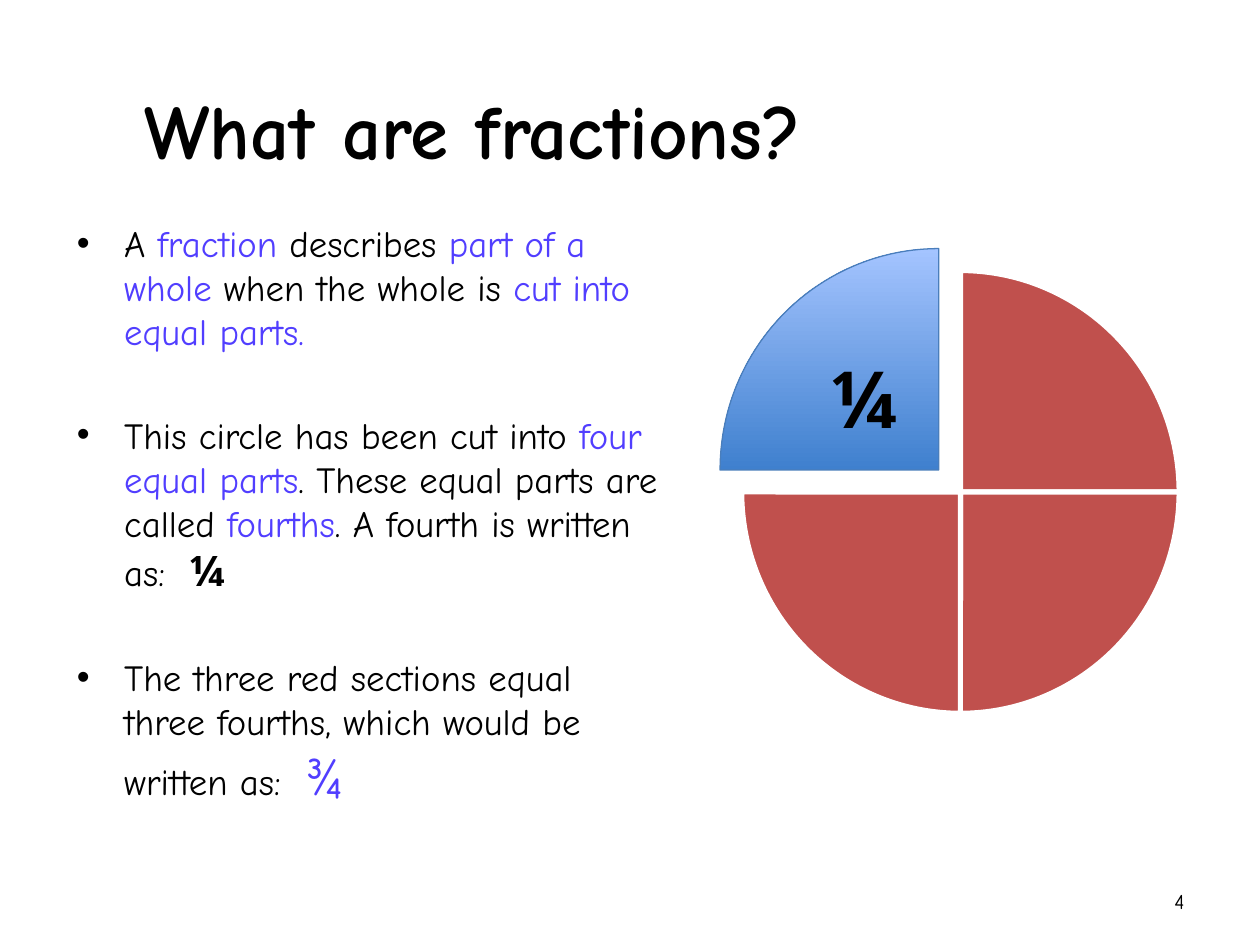
from dataclasses import dataclass

from lxml.etree import SubElement
from pptx import Presentation
from pptx.chart.data import CategoryChartData
from pptx.dml.color import RGBColor as Color
from pptx.enum.chart import XL_CHART_TYPE as ChartType
from pptx.enum.text import MSO_ANCHOR as Anchor, MSO_AUTO_SIZE as AutoSize, PP_ALIGN as Align
from pptx.oxml.ns import qn
from pptx.util import Inches, Pt


@dataclass(frozen=True)
class Theme:
    black: str = "000000"
    white: str = "FFFFFF"
    accent: str = "513EFF"
    red: str = "C0504D"
    blue_dark: str = "3F80CE"
    blue_light: str = "A4C4FF"
    blue_line: str = "4A7EBB"
    font: str = "Comic Neue"
    symbol_font: str = "Noto Sans"
    chart_font: str = "Calibri"
    title_size: int = 44
    body_size: int = 21
    fourth_size: int = 24
    three_fourths_size: int = 30
    label_size: int = 45
    number_size: int = 12
    chart_size: int = 18


theme = Theme()


def add_text(paragraph, text, size=theme.body_size, color=theme.black, font=theme.font, bold=False):
    run = paragraph.add_run()
    run.text = text
    run.font.size = Pt(size)
    run.font.name = font
    run.font.bold = bold
    run.font.color.rgb = Color.from_string(color)


def place(shape, left, top, width, height):
    shape.left, shape.top = Inches(left), Inches(top)
    shape.width, shape.height = Inches(width), Inches(height)


presentation = Presentation()
presentation.slide_width, presentation.slide_height = Inches(10), Inches(7.5)
slide = presentation.slides.add_slide(presentation.slide_layouts[1])

# Title
title = slide.shapes.title
place(title, 0, 0.6, 7.51, 0.84)
title.text_frame.auto_size = AutoSize.NONE
title.text_frame.vertical_anchor = Anchor.MIDDLE
paragraph = title.text_frame.paragraphs[0]
paragraph.alignment = Align.CENTER
add_text(paragraph, "What are fractions?", size=theme.title_size, bold=True)

# Bulleted explanation
accent = {"color": theme.accent}
fourth = {"size": theme.fourth_size, "font": theme.symbol_font, "bold": True}
bullets = [
    [("A ", {}), ("fraction ", accent), ("describes ", {}), ("part of a whole ", accent),
     ("when the whole is ", {}), ("cut into equal parts.", accent)],
    [("This circle has been cut into ", {}), ("four equal parts", accent),
     (". These equal parts are called ", {}), ("fourths", accent),
     (". A fourth is written as:  ", {}), ("¼", fourth)],
    [("The three red sections equal three fourths, which would be written as:  ", {}),
     ("¾", {"size": theme.three_fourths_size, **accent})],
]
body = slide.placeholders[1]
place(body, 0.51, 1.7, 4.82, 5.31)
body.text_frame.auto_size = AutoSize.NONE
for index, runs in enumerate(bullets):
    paragraph = body.text_frame.paragraphs[0]
    if index:
        paragraph = body.text_frame.add_paragraph()
        paragraph.space_before = Pt(34)
    for text, style in runs:
        add_text(paragraph, text, **style)

# Pie of four equal parts
chart_data = CategoryChartData()
chart_data.categories = ["1", "2", "3", "4"]
chart_data.add_series("Series 1", [25] * 4)
chart = slide.shapes.add_chart(
    ChartType.PIE, Inches(5.71), Inches(1.7), Inches(3.78), Inches(4.41), chart_data).chart
chart.has_legend = False
chart.has_title = False
chart.font.name = theme.chart_font
chart.font.size = Pt(theme.chart_size)
chart.font.color.rgb = Color.from_string(theme.black)
plot = chart.plots[0]
plot.vary_by_categories = True
series = plot.series[0]
for index in range(3):
    part = series.points[index].format
    part.fill.solid()
    part.fill.fore_color.rgb = Color.from_string(theme.red)
    part.line.color.rgb = Color.from_string(theme.white)
    part.line.width = Pt(3)

# Blue fourth, pulled out of the circle
blue_part = series.points[3].format
blue_part.fill.gradient()
blue_part.fill.gradient_angle = 90
for stop, color, position in zip(
        blue_part.fill.gradient_stops, (theme.blue_dark, theme.blue_light), (0, 1)):
    stop.color.rgb = Color.from_string(color)
    stop.position = position
blue_part.line.color.rgb = Color.from_string(theme.blue_line)
blue_part.line.width = Pt(0.75)
blue_point = series._element.findall(qn("c:dPt"))[3]
explosion = SubElement(blue_point, qn("c:explosion"), val="14")
blue_point.find(qn("c:spPr")).addprevious(explosion)

# Plot area centred in the chart
plot_area = plot._element.getparent()
layout = plot_area.find(qn("c:layout"))
if layout is None:
    layout = SubElement(plot_area, qn("c:layout"))
    plot_area.insert(0, layout)
manual = SubElement(layout, qn("c:manualLayout"))
for tag, value in (("layoutTarget", "inner"), ("xMode", "edge"), ("yMode", "edge"),
                   ("x", "0.035"), ("y", "0.1"), ("w", "0.93"), ("h", "0.8")):
    SubElement(manual, qn(f"c:{tag}"), val=value)

# Label on the blue fourth
label = slide.shapes.add_textbox(Inches(6.5), Inches(2.73), Inches(1.18), Inches(0.86))
label.text_frame.word_wrap = True
add_text(label.text_frame.paragraphs[0], "¼", size=theme.label_size,
         font=theme.symbol_font, bold=True)

# Slide number
number = slide.shapes.add_textbox(Inches(7.17), Inches(6.95), Inches(2.33), Inches(0.4))
number.text_frame.word_wrap = True
number.text_frame.vertical_anchor = Anchor.MIDDLE
paragraph = number.text_frame.paragraphs[0]
paragraph.alignment = Align.RIGHT
add_text(paragraph, "4", size=theme.number_size)

presentation.save("out.pptx")
